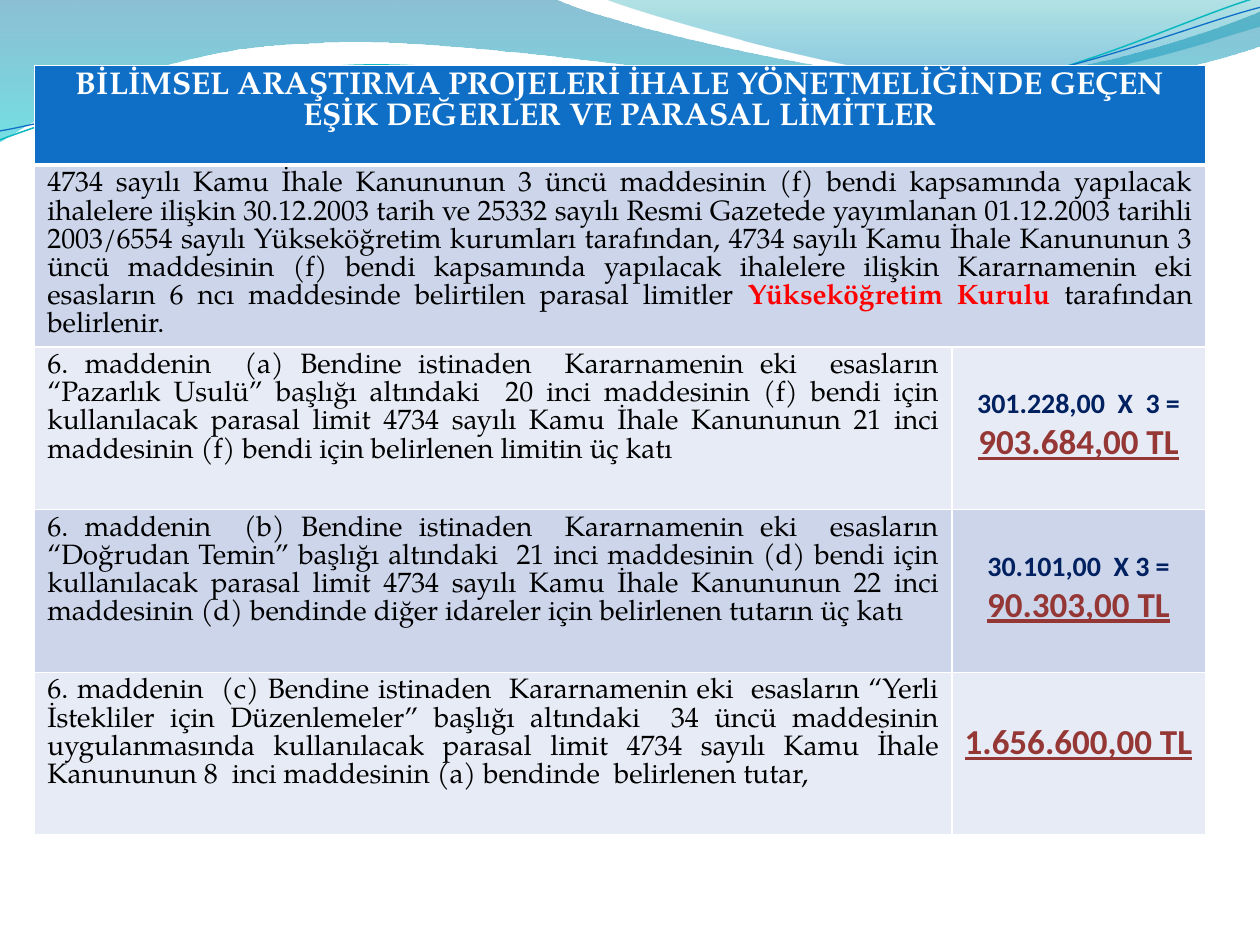
"""Builds a slide with a table of tender thresholds and monetary limits under a wave header."""
from lxml import etree
from pptx import Presentation
from pptx.dml.color import RGBColor
from pptx.enum.text import PP_ALIGN
from pptx.oxml.ns import qn
from pptx.util import Cm, Pt

CENTER, JUSTIFY = PP_ALIGN.CENTER, PP_ALIGN.JUSTIFY
SERIF, SANS = "TeX Gyre Pagella", "Calibri"
WHITE, BLACK, RED = "FFFFFF", "000000", "FF0000"
BLUE, NAVY, BRICK = "0F6FC6", "002060", "953735"
BAND_DARK, BAND_LIGHT = "CCD5EA", "E7EBF5"


def color(hex_value):
    return RGBColor.from_string(hex_value)


def add_run(paragraph, text, size, font, hex_value, bold=False, underline=False):
    run = paragraph.add_run()
    run.text = text
    run.font.size = Pt(size)
    run.font.name = font
    run.font.color.rgb = color(hex_value)
    run.font.bold = bold
    run.font.underline = underline


prs = Presentation()
prs.slide_width, prs.slide_height = Cm(25.4), Cm(19.05)
slide = prs.slides.add_slide(prs.slide_layouts[6])

waves = [
    ([(0, 0), (11.18, -0.03), (12.09, 0.43, 16.87, 1.6, 19.25, 1.6),
      (21.67, 1.6, 24.33, 0.66, 25.4, 0.23), (25.43, 0.91),
      (24.97, 1.12, 22.1, 1.93, 18.95, 1.91), (15.8, 1.91, 9.7, 0.71, 6.53, 0.86),
      (3.25, 0.91, 1.17, 2.11, -0.03, 2.87), (0, 0)],
     [(0, "0074A1", 45), (1, "00C6CF", 55)], None),
    ([(12.17, -0.03), (12.93, 0.28, 17.32, 1.57, 19.53, 1.65),
      (21.74, 1.75, 24.41, 0.81, 25.4, 0.53), (25.4, 0), (12.17, -0.03)],
     [(0, "00A1A9", 30), (0.8, "008BBF", 45)], None),
    ([(0, 2.82), (1.22, 2.36, 4.01, 1.45, 7.04, 1.32),
      (10.03, 1.19, 15.06, 2.26, 18.11, 2.03), (21.16, 1.8, 23.83, 0.38, 25.35, -0.05)],
     None, ("0AB8BF", 0.85)),
    ([(0, 2.64), (1.19, 2.44, 4.17, 1.55, 7.19, 1.42),
      (10.24, 1.3, 15.16, 2.13, 18.21, 1.91), (21.23, 1.7, 23.9, 0.53, 25.4, 0.15)],
     None, (BLUE, 0.75)),
]

for segments, stops, stroke in waves:
    outline = [(Cm(s[i]), Cm(s[i + 1])) for s in segments for i in range(0, len(s), 2)]
    builder = slide.shapes.build_freeform(*outline[0])
    builder.add_line_segments(outline[1:], close=stops is not None)
    wave = builder.convert_to_shape()
    wave.shadow.inherit = False
    straight_steps = iter(list(wave._element.spPr.iter(qn("a:lnTo"))))
    for segment in segments[1:]:
        step = next(straight_steps)
        if len(segment) == 6:
            step.tag = qn("a:cubicBezTo")
            for _ in range(2):
                extra = next(straight_steps)
                step.append(extra[0])
                extra.getparent().remove(extra)
    if stops:
        wave.line.fill.background()
        wave.fill.gradient()
        wave.fill.gradient_angle = 270
        for stop, (position, hex_value, _) in zip(wave.fill.gradient_stops, stops):
            stop.position = position
            stop.color.rgb = color(hex_value)
        for tint, (_, _, opacity) in zip(wave._element.spPr.iter(qn("a:srgbClr")), stops):
            etree.SubElement(tint, qn("a:alpha"), val=str(opacity * 1000))
    else:
        wave.fill.background()
        wave.line.color.rgb = color(stroke[0])
        wave.line.width = Pt(stroke[1])

heading = "BİLİMSEL ARAŞTIRMA PROJELERİ İHALE YÖNETMELİĞİNDE GEÇEN EŞİK DEĞERLER VE PARASAL LİMİTLER"
legal_basis = (
    "4734 sayılı Kamu İhale Kanununun 3 üncü maddesinin (f) bendi kapsamında yapılacak ihalelere "
    "ilişkin 30.12.2003 tarih ve 25332 sayılı Resmi Gazetede yayımlanan 01.12.2003 tarihli "
    "2003/6554 sayılı Yükseköğretim kurumları tarafından, 4734 sayılı Kamu İhale Kanununun 3 üncü "
    "maddesinin (f) bendi kapsamında yapılacak ihalelere ilişkin Kararnamenin eki esasların "
    "6 ncı maddesinde belirtilen parasal limitler "
)
limits = [
    ("6. maddenin  (a) Bendine istinaden  Kararnamenin eki  esasların “Pazarlık Usulü” başlığı "
     "altındaki  20 inci maddesinin (f) bendi için kullanılacak parasal limit 4734 sayılı Kamu "
     "İhale Kanununun 21 inci maddesinin (f) bendi için belirlenen limitin üç katı",
     "301.228,00  X  3 = ", "903.684,00 TL"),
    ("6. maddenin  (b) Bendine istinaden  Kararnamenin eki  esasların “Doğrudan Temin” başlığı "
     "altındaki  21 inci maddesinin (d) bendi için kullanılacak parasal limit 4734 sayılı Kamu "
     "İhale Kanununun 22 inci maddesinin (d) bendinde diğer idareler için belirlenen tutarın üç katı",
     "30.101,00  X 3 = ", "90.303,00 TL"),
    ("6. maddenin  (c) Bendine istinaden  Kararnamenin eki  esasların “Yerli İstekliler için "
     "Düzenlemeler” başlığı altındaki  34 üncü maddesinin uygulanmasında kullanılacak parasal limit "
     "4734 sayılı Kamu İhale Kanununun 8  inci maddesinin (a) bendinde  belirlenen tutar,",
     "", "1.656.600,00 TL"),
]

row_heights = [2.01, 3.66, 3.28, 3.28, 3.28]
table = slide.shapes.add_table(5, 2, Cm(0.7), Cm(1.32), Cm(23.6), Cm(sum(row_heights))).table
for column, width in zip(table.columns, (18.49, 5.11)):
    column.width = Cm(width)
for row, height in zip(table.rows, row_heights):
    row.height = Cm(height)
for merged_row in (0, 1):
    table.cell(merged_row, 0).merge(table.cell(merged_row, 1))

title_line = table.cell(0, 0).text_frame.paragraphs[0]
title_line.alignment, title_line.line_spacing = CENTER, Pt(17.8)
add_run(title_line, heading, 18, SERIF, WHITE, bold=True)

basis_line = table.cell(1, 0).text_frame.paragraphs[0]
basis_line.alignment, basis_line.line_spacing = JUSTIFY, Pt(16.1)
add_run(basis_line, legal_basis, 16, SERIF, BLACK)
add_run(basis_line, "Yükseköğretim Kurulu", 16, SERIF, RED, bold=True)
add_run(basis_line, " tarafından belirlenir.", 16, SERIF, BLACK)

for row_index, (clause, product, amount) in enumerate(limits, start=2):
    clause_line = table.cell(row_index, 0).text_frame.paragraphs[0]
    clause_line.alignment, clause_line.line_spacing = JUSTIFY, Pt(16.1)
    add_run(clause_line, clause, 16, SERIF, BLACK)
    amount_cell = table.cell(row_index, 1)
    amount_cell.margin_top = Cm(0.81 if product else 0.99)
    amount_line = amount_cell.text_frame.paragraphs[0]
    amount_line.alignment = CENTER
    if product:
        add_run(amount_line, product, 16, SANS, NAVY, bold=True)
    add_run(amount_line, amount, 20, SANS, BRICK, bold=True, underline=True)

row_fills = [BLUE, BAND_DARK, BAND_LIGHT, BAND_DARK, BAND_LIGHT]
for row_index, row_fill in enumerate(row_fills):
    for cell in table.rows[row_index].cells:
        cell.fill.solid()
        cell.fill.fore_color.rgb = color(row_fill)
        cell_props = cell._tc.get_or_add_tcPr()
        for position, side in enumerate(("lnL", "lnR", "lnT", "lnB")):
            thick = (row_index, side) in ((0, "lnB"), (1, "lnT"))
            border = etree.Element(qn(f"a:{side}"), w=str(Pt(3 if thick else 1)))
            border_fill = etree.SubElement(border, qn("a:solidFill"))
            etree.SubElement(border_fill, qn("a:srgbClr"), val=WHITE)
            cell_props.insert(position, border)

prs.save("out.pptx")
